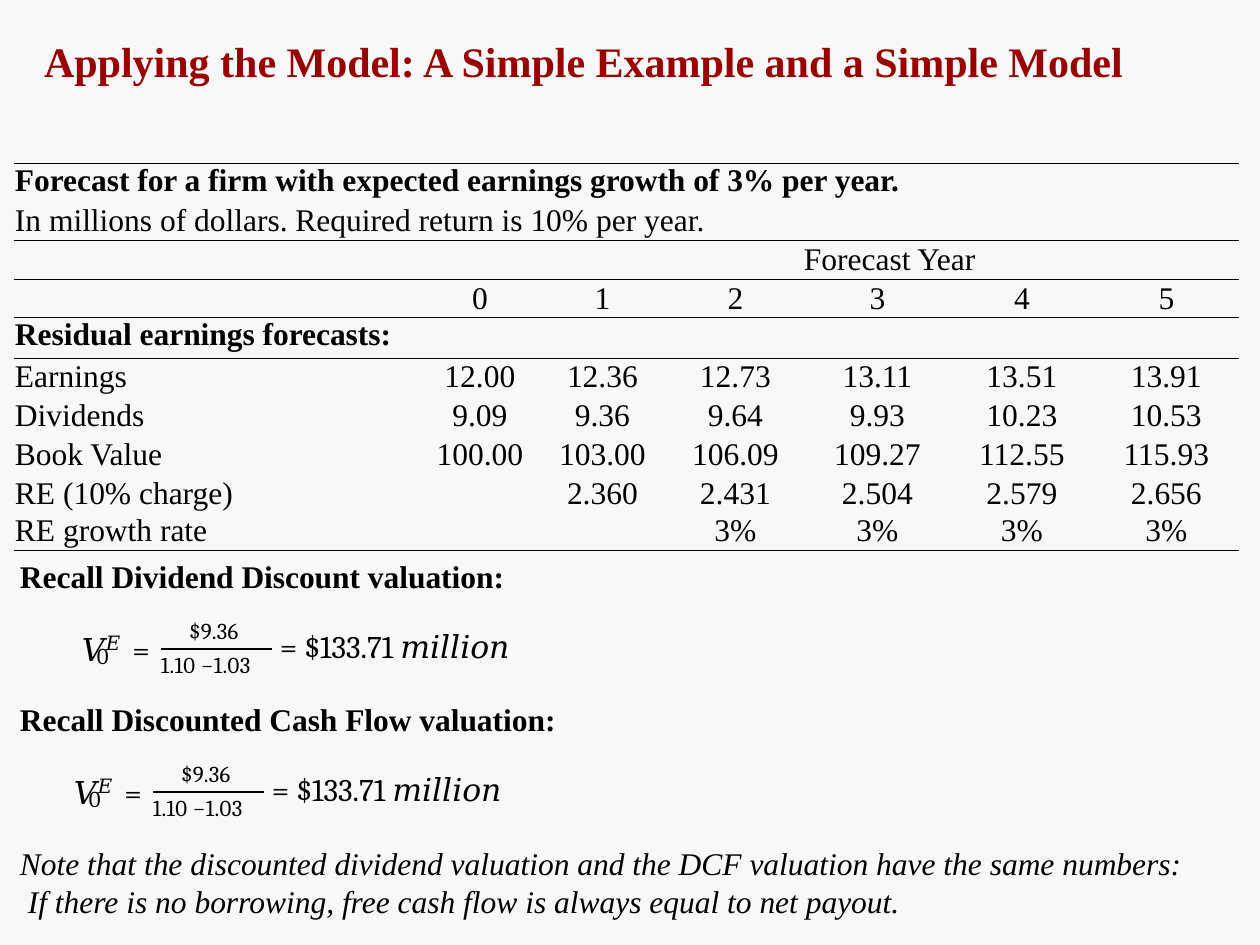
from lxml.etree import SubElement as Sub
from pptx import Presentation
from pptx.dml.color import RGBColor as RGB
from pptx.enum.text import PP_ALIGN as Align
from pptx.oxml import parse_xml
from pptx.oxml.ns import nsdecls, qn
from pptx.util import Emu, Pt

HEX = {"back": "F8F8F8", "ink": "000000", "title": "990000"}
SERIF, MATH = "Times New Roman", "Cambria"
PLAIN = "{2D5ABB26-0587-4C30-8999-92F81FD0307C}"
COLS = [320, 205, 127, 139, 145, 144, 145]
ROWS = [40, 37, 39, 38, 41, 39, 39, 39, 38, 37]
LEADS = [None, 20.2, 21.1, 21.1, None, 20.8, 20.8, 20.8, 20.8, 20.1]
WIDE, BOLD = {0, 1, 2, 4}, {0, 4}
RULES = {0: "lnT", 1: "lnB", 2: "lnT", 3: "lnB", 4: "lnT", 9: "lnB"}
DATA = [
    ["Forecast for a firm with expected earnings growth of 3% per year."],
    ["In millions of dollars. Required return is 10% per year."],
    ["Forecast Year"],
    ["", "0", "1", "2", "3", "4", "5"],
    ["Residual earnings forecasts:"],
    ["Earnings", "12.00", "12.36", "12.73", "13.11", "13.51", "13.91"],
    ["Dividends", "9.09", "9.36", "9.64", "9.93", "10.23", "10.53"],
    ["Book Value", "100.00", "103.00", "106.09", "109.27", "112.55", "115.93"],
    ["RE (10% charge)", "", "2.360", "2.431", "2.504", "2.579", "2.656"],
    ["RE growth rate", "", "", "3%", "3%", "3%", "3%"],
]


def px(n):
    """Turn pixels into EMU."""
    return Emu(round(n * 914400 / 126))


def indent(para, n):
    """Set the left indent of a paragraph."""
    para._p.get_or_add_pPr().set("marL", str(px(n)))


def style(run, size=18, name=SERIF, color="ink", bold=False, italic=False, gap=0):
    """Format one run; gap is letter spacing in points."""
    font = run.font
    font.size, font.name, font.bold, font.italic = Pt(size), name, bold, italic
    font.color.rgb = RGB.from_string(HEX[color])
    if gap:
        font._element.set("spc", str(round(gap * 100)))


def write(slide, box, text, **look):
    """Add a text box with one look and return its frame."""
    frame = slide.shapes.add_textbox(*map(px, box)).text_frame
    frame.word_wrap = True
    frame.margin_left, frame.margin_top = px(1), px(2)
    frame.margin_right = frame.margin_bottom = 0
    frame.text = text
    frame.paragraphs[0].space_before = Pt(1)
    for para in frame.paragraphs:
        for run in para.runs:
            style(run, **look)
    return frame


def edge(cell, side):
    """Draw a thin rule on one side of a cell."""
    line = parse_xml(
        f'<a:{side} {nsdecls("a")} w="6350"><a:solidFill>'
        f'<a:srgbClr val="{HEX["ink"]}"/></a:solidFill></a:{side}>')
    cell._tc.get_or_add_tcPr().insert(0, line)


def fill(cell, text, row, col):
    """Set the text, fill and rules of a cell."""
    cell.fill.solid()
    cell.fill.fore_color.rgb = RGB.from_string(HEX["back"])
    cell.margin_top = cell.margin_right = cell.margin_bottom = 0
    cell.margin_left = px(87 if col == 1 and row not in WIDE else 0)
    cell.text = text
    para = cell.text_frame.paragraphs[0]
    para.alignment = Align.CENTER if col else Align.LEFT
    if col == 0:
        indent(para, 790 if row == 2 else 1)
    if LEADS[row]:
        para.line_spacing = Pt(LEADS[row])
    for run in para.runs:
        style(run, bold=row in BOLD, gap=-0.03 if row in BOLD else 0)
    if row in RULES and (col == 0 or row not in WIDE):
        edge(cell, RULES[row])


def grid(slide, x, y):
    """Place the forecast table."""
    box = map(px, (x, y, sum(COLS), sum(ROWS)))
    table = slide.shapes.add_table(len(ROWS), len(COLS), *box).table
    table.first_row = table.horz_banding = False
    table._tbl.tblPr.find(qn("a:tableStyleId")).text = PLAIN
    for col, width in zip(table.columns, COLS):
        col.width = px(width)
    for i, (row, height) in enumerate(zip(table.rows, ROWS)):
        row.height = px(height)
        texts = DATA[i] + [""] * (len(COLS) - len(DATA[i]))
        for j, text in enumerate(texts):
            fill(table.cell(i, j), text, i, j)
        if i in WIDE:
            table.cell(i, 0).merge(table.cell(i, len(COLS) - 1))


def value(slide, x, y):
    """Place the valuation formula with its fraction bar."""
    write(slide, (x + 19, y + 15, 24, 32), "0", size=13, name=MATH, gap=0.4)
    frame = write(slide, (x + 4, y, 90, 42), "𝑉", name=MATH, gap=0.7)
    para = frame.paragraphs[0]
    for text, size, gap in (("𝐸 ", 19.5, 2.2), ("=", 18, 0)):
        run = para.add_run()
        run.text = text
        style(run, size, MATH, gap=gap)
    para.runs[1].font._element.set("baseline", "30000")
    bar = slide.shapes.add_connector(1, *map(px, (x + 84, y + 24, x + 195, y + 24)))
    bar.line.color.rgb = RGB.from_string(HEX["ink"])
    bar.line.width = Pt(1.2)
    Sub(bar._element.spPr, qn("a:effectLst"))
    write(slide, (x + 111, y - 10, 70, 32), "$9.36", size=13, name=MATH, gap=0.2)
    write(slide, (x + 83, y + 24, 120, 32), "1.10 −1.03", size=13, name=MATH, gap=0.25)
    write(slide, (x + 202, y, 280, 42), "= $133.71 𝑚𝑖𝑙𝑙𝑖𝑜𝑛", name=MATH)


def recall(slide, x, y, topic, shift):
    """Place a recall heading with its formula below."""
    write(slide, (x, y, 600, 42), f"Recall {topic} valuation:", bold=True, gap=-0.03)
    value(slide, x + shift, y + 70)


def note(slide, x, y):
    """Place the closing note."""
    text = ("Note that the discounted dividend valuation and the DCF valuation "
            "have the same numbers:\nIf there is no borrowing, free cash flow "
            "is always equal to net payout.")
    frame = write(slide, (x, y, 1210, 79), text, italic=True)
    indent(frame.paragraphs[1], 8)


def main():
    """Build and save the slide."""
    deck = Presentation()
    deck.slide_width, deck.slide_height = px(1260), px(945)
    slide = deck.slides.add_slide(deck.slide_layouts[6])
    back = slide.background.fill
    back.solid()
    back.fore_color.rgb = RGB.from_string(HEX["back"])
    write(slide, (43, 34, 1140, 54),
          "Applying the Model: A Simple Example and a Simple Model",
          size=24, color="title", bold=True)
    grid(slide, 14, 163)
    recall(slide, 19, 555, "Dividend Discount", 58)
    recall(slide, 19, 698, "Discounted Cash Flow", 50)
    note(slide, 19, 842)
    deck.save("out.pptx")


if __name__ == "__main__":
    main()
